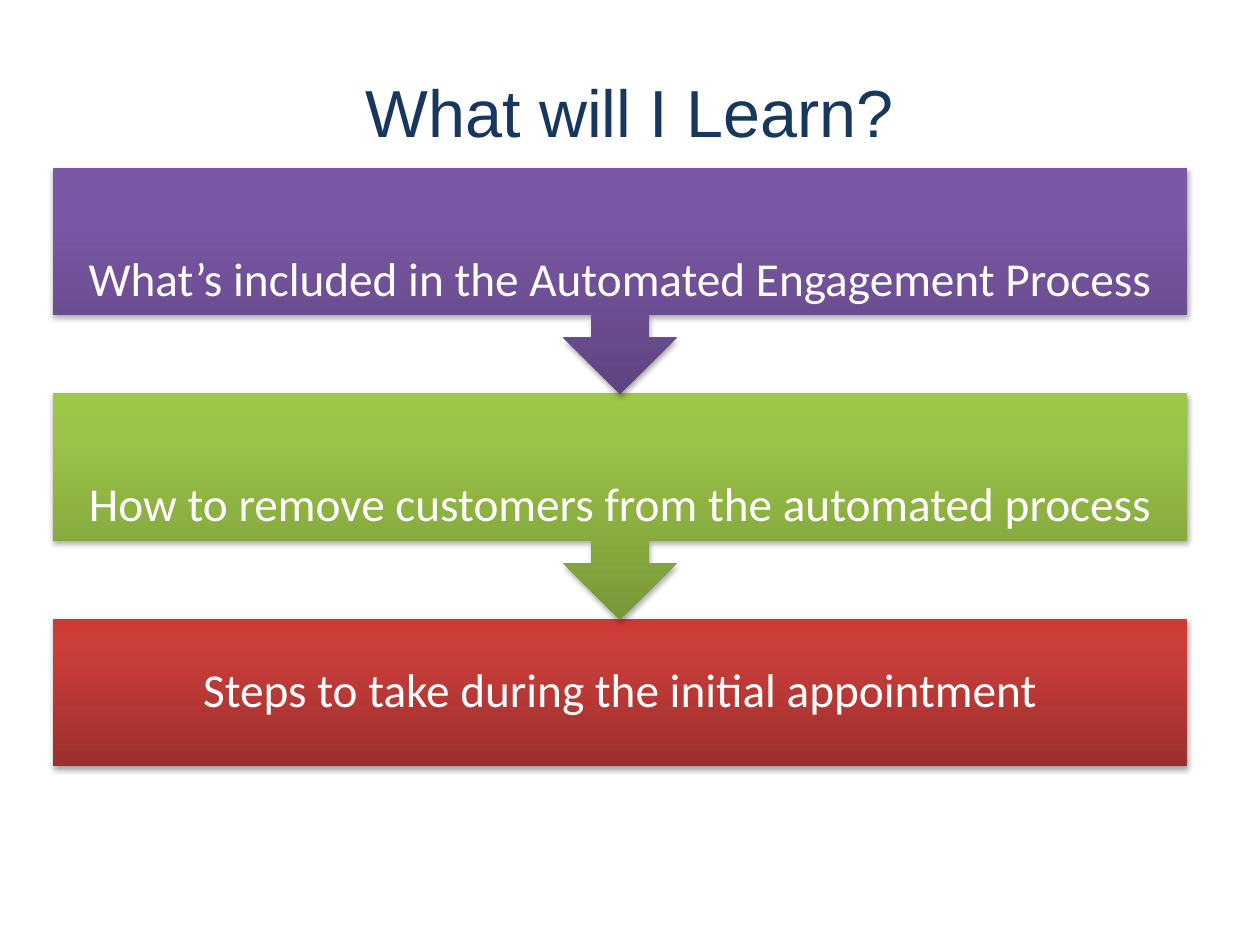
from pptx import Presentation
from pptx.dml.color import RGBColor
from pptx.enum.shapes import MSO_SHAPE as Shape
from pptx.enum.text import MSO_ANCHOR as Anchor, PP_ALIGN as Align
from pptx.oxml import parse_xml
from pptx.oxml.ns import nsdecls
from pptx.util import Inches, Pt

NAVY = RGBColor(0x17, 0x37, 0x5E)
WHITE = RGBColor(0xFF, 0xFF, 0xFF)
PURPLE = [RGBColor(0x5F, 0x44, 0x80), RGBColor(0x7B, 0x58, 0xA6), RGBColor(0x7C, 0x57, 0xA8)]
GREEN = [RGBColor(0x77, 0x97, 0x37), RGBColor(0x9B, 0xC3, 0x48), RGBColor(0x9D, 0xC7, 0x46)]
RED = [RGBColor(0x9C, 0x2F, 0x2D), RGBColor(0xCB, 0x3E, 0x3A), RGBColor(0xCE, 0x3B, 0x37)]
STOPS = (0, 80000, 100000)

LEFT, WIDTH = Inches(0.42), Inches(9)
TOP, STEP = Inches(1.33), Inches(1.79)


def paint(shape, tones):
    stops = "".join(
        f'<a:gs pos="{pos}"><a:srgbClr val="{tone}"/></a:gs>'
        for pos, tone in zip(STOPS, tones)
    )
    props = shape.element.spPr
    props.prstGeom.addnext(parse_xml(
        f'<a:gradFill {nsdecls("a")} rotWithShape="0"><a:gsLst>{stops}</a:gsLst>'
        '<a:lin ang="16200000" scaled="0"/></a:gradFill>'
    ))
    shape.line.fill.background()
    shape.shadow.inherit = False
    props.effectLst.append(parse_xml(
        f'<a:outerShdw {nsdecls("a")} blurRad="{Pt(3.1)}" dist="{Pt(1.8)}" '
        'dir="5400000" rotWithShape="0"><a:srgbClr val="000000">'
        '<a:alpha val="35000"/></a:srgbClr></a:outerShdw>'
    ))


def style(para, font, size, color):
    para.alignment = Align.CENTER
    para.font.name = font
    para.font.size = Pt(size)
    para.font.color.rgb = color


deck = Presentation()
deck.slide_width, deck.slide_height = Inches(10), Inches(7.5)
slide = deck.slides.add_slide(deck.slide_layouts[5])

title = slide.shapes.title
title.left, title.top = Inches(0.5), Inches(0.42)
title.width, title.height = Inches(9), Inches(0.92)
title.text_frame.text = "What will I Learn?"
title.text_frame.vertical_anchor = Anchor.MIDDLE
style(title.text_frame.paragraphs[0], "Arial", 38, NAVY)

steps = [
    ("What’s included in the Automated Engagement Process", PURPLE, Shape.UP_ARROW_CALLOUT, 1.8, 180),
    ("How to remove customers from the automated process", GREEN, Shape.UP_ARROW_CALLOUT, 1.8, 180),
    ("Steps to take during the initial appointment", RED, Shape.RECTANGLE, 1.17, 0),
]

for row, (text, tones, kind, tall, turn) in reversed(list(enumerate(steps))):
    area = LEFT, TOP + row * STEP, WIDTH, Inches(tall)
    block = slide.shapes.add_shape(kind, *area)
    block.rotation = turn
    paint(block, tones)

    frame = slide.shapes.add_textbox(*area).text_frame
    frame.word_wrap = True
    frame.vertical_anchor = Anchor.MIDDLE
    frame.margin_left = frame.margin_right = Inches(0.21)
    frame.margin_top = frame.margin_bottom = Inches(0.21)
    frame.text = text
    para = frame.paragraphs[0]
    para.line_spacing = 0.9
    style(para, "Calibri", 27, WHITE)

deck.save("out.pptx")
